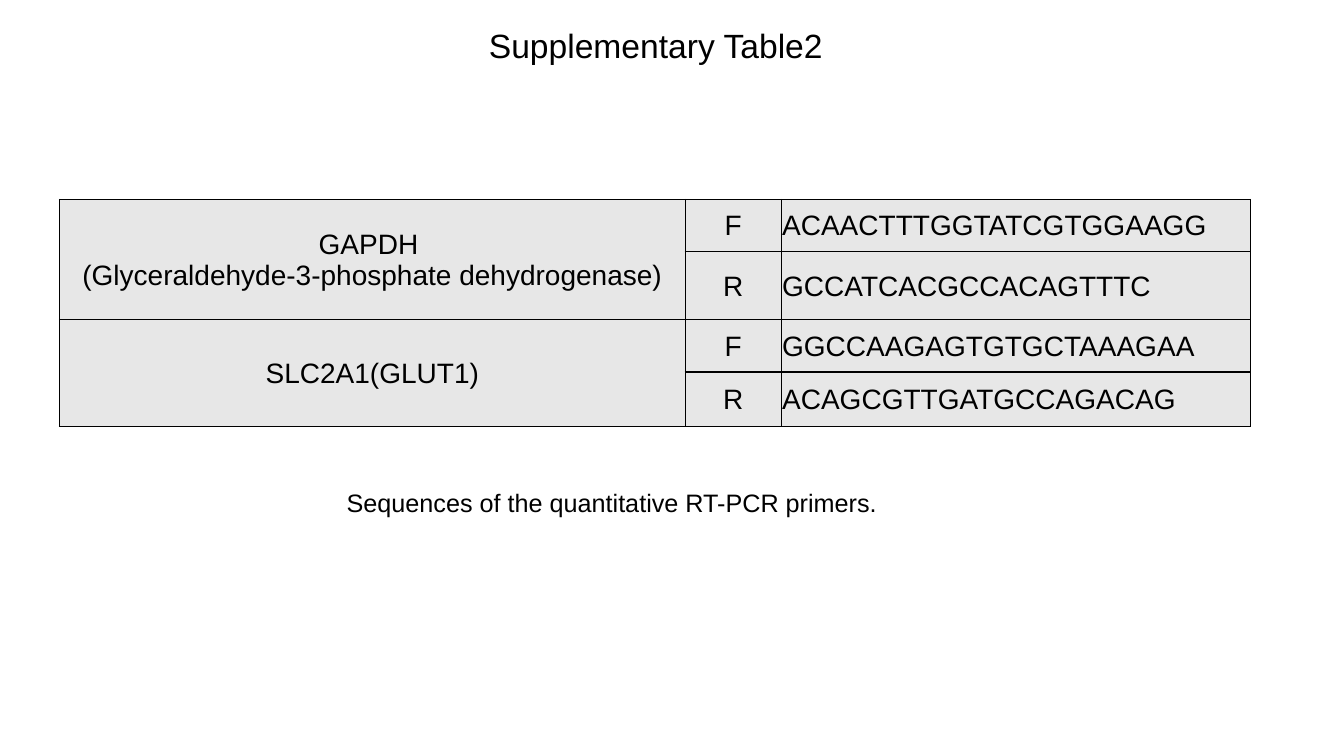
from dataclasses import dataclass

from lxml.etree import SubElement
from pptx import Presentation
from pptx.dml.color import RGBColor
from pptx.enum.text import MSO_ANCHOR, MSO_AUTO_SIZE, PP_ALIGN
from pptx.oxml.ns import qn
from pptx.util import Pt


@dataclass(frozen=True)
class Theme:
    font: str = "Arial"
    ink: str = "000000"
    cell_fill: str = "E7E7E7"
    title_size: int = 24
    table_size: int = 20
    caption_size: int = 18


theme = Theme()


def format_text(text_frame, size, alignment=PP_ALIGN.LEFT):
    for paragraph in text_frame.paragraphs:
        paragraph.alignment = alignment
        paragraph.font.name = theme.font
        paragraph.font.size = Pt(size)
        paragraph.font.color.rgb = RGBColor.from_string(theme.ink)


def add_borders(cell):
    properties = cell._tc.get_or_add_tcPr()
    for side in ("lnL", "lnR", "lnT", "lnB"):
        line = SubElement(properties, qn(f"a:{side}"), w=str(Pt(1)))
        fill = SubElement(line, qn("a:solidFill"))
        SubElement(fill, qn("a:srgbClr"), val=theme.ink)


presentation = Presentation()
presentation.slide_width, presentation.slide_height = Pt(960), Pt(540)
slide = presentation.slides.add_slide(presentation.slide_layouts[5])

# Title
title = slide.shapes.title
title.left, title.top, title.width, title.height = Pt(342), Pt(14.4), Pt(266.4), Pt(36)
title.text_frame.text = "Supplementary Table2"
title.text_frame.word_wrap = False
title.text_frame.auto_size = MSO_AUTO_SIZE.SHAPE_TO_FIT_TEXT
title.text_frame.vertical_anchor = MSO_ANCHOR.TOP
format_text(title.text_frame, theme.title_size)

# Primer table: each gene spans a forward and a reverse row
primers = [
    ("GAPDH \v(Glyceraldehyde-3-phosphate dehydrogenase)",
     "ACAACTTTGGTATCGTGGAAGG", "GCCATCACGCCACAGTTTC"),
    ("SLC2A1(GLUT1)", "GGCCAAGAGTGTGCTAAAGAA", "ACAGCGTTGATGCCAGACAG"),
]
column_widths = (447, 68.5, 335.5)
row_heights = (37.3, 39) * len(primers)
table = slide.shapes.add_table(
    len(row_heights), len(column_widths), Pt(42.5), Pt(142.5),
    Pt(sum(column_widths)), Pt(sum(row_heights))).table
table.first_row = table.horz_banding = False
for column, width in zip(table.columns, column_widths):
    column.width = Pt(width)
for row, height in zip(table.rows, row_heights):
    row.height = Pt(height)

for index, (gene, forward, reverse) in enumerate(primers):
    top = 2 * index
    table.cell(top, 0).merge(table.cell(top + 1, 0))
    table.cell(top, 0).text = gene
    for offset, (direction, sequence) in enumerate((("F", forward), ("R", reverse))):
        table.cell(top + offset, 1).text = direction
        table.cell(top + offset, 2).text = sequence

# Cell format
for row in table.rows:
    for column_index, cell in enumerate(row.cells):
        add_borders(cell)
        cell.fill.solid()
        cell.fill.fore_color.rgb = RGBColor.from_string(theme.cell_fill)
        cell.vertical_anchor = MSO_ANCHOR.MIDDLE
        cell.margin_left = cell.margin_right = cell.margin_top = Pt(0.7)
        cell.margin_bottom = Pt(0)
        alignment = PP_ALIGN.LEFT if column_index == 2 else PP_ALIGN.CENTER
        format_text(cell.text_frame, theme.table_size, alignment)

# Caption
caption = slide.shapes.add_textbox(Pt(240.5), Pt(344.2), Pt(480), Pt(29))
caption.text_frame.text = "Sequences of the quantitative RT-PCR primers."
caption.text_frame.word_wrap = True
caption.text_frame.auto_size = MSO_AUTO_SIZE.SHAPE_TO_FIT_TEXT
format_text(caption.text_frame, theme.caption_size)

presentation.save("out.pptx")
